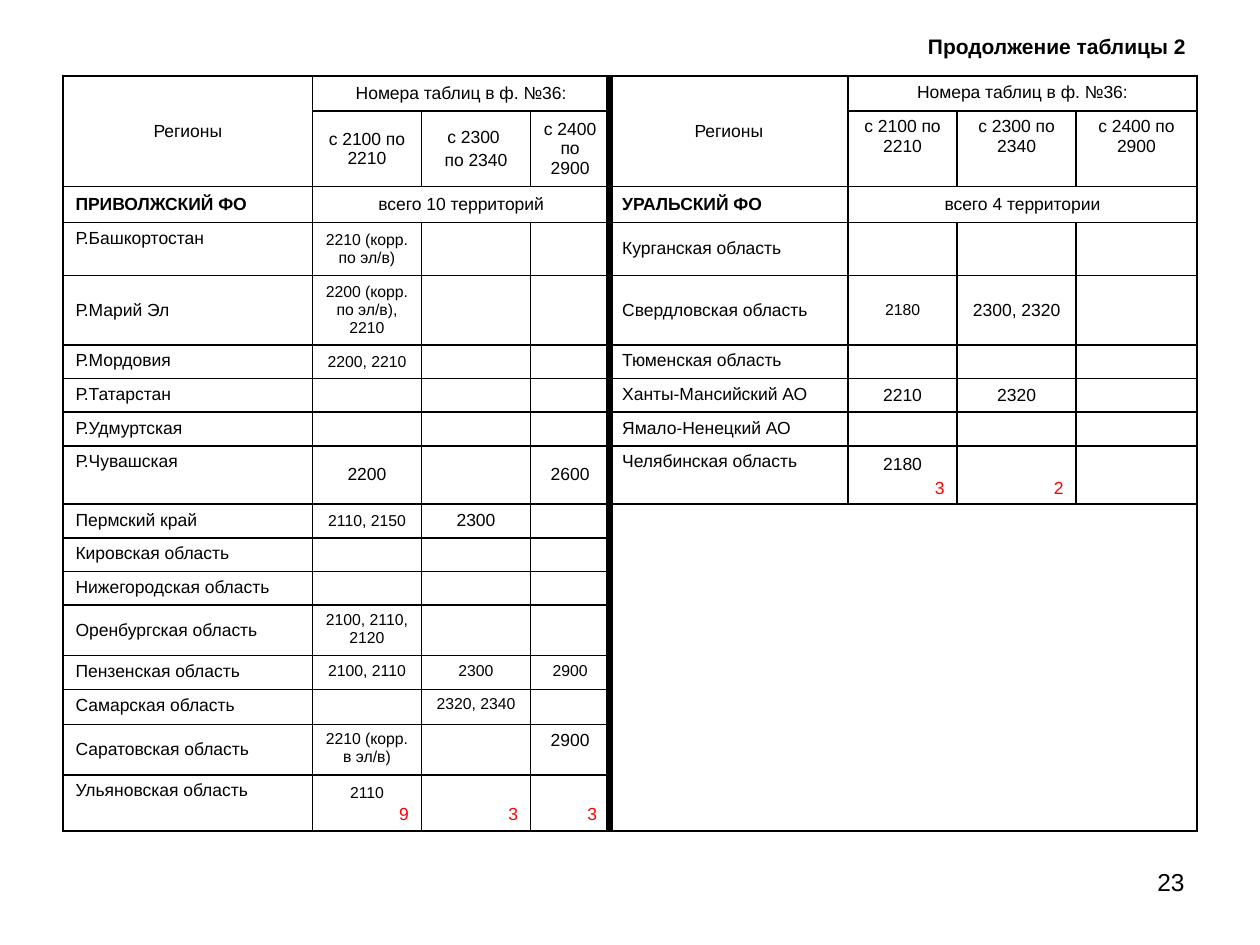
from dataclasses import dataclass

from lxml import etree
from pptx import Presentation
from pptx.dml.color import RGBColor
from pptx.enum.text import MSO_ANCHOR, PP_ALIGN
from pptx.oxml.ns import qn
from pptx.util import Pt

TOP, MIDDLE, BOTTOM = MSO_ANCHOR.TOP, MSO_ANCHOR.MIDDLE, MSO_ANCHOR.BOTTOM
LEFT, CENTER, RIGHT = PP_ALIGN.LEFT, PP_ALIGN.CENTER, PP_ALIGN.RIGHT
PLAIN_TABLE_STYLE = "{2D5ABB26-0587-4C30-8999-92F81FD0307C}"


@dataclass(frozen=True)
class Theme:
    font: str = "Arial"
    ink: str = "000000"
    total: str = "FF0000"
    title: int = 12
    body: int = 10
    small: int = 9
    page: int = 14
    grid: float = 1
    frame: float = 1.5
    divider: float = 4.5
    gap: int = 2


@dataclass(frozen=True)
class Entry:
    """Lines of one cell, with an optional red total under them."""
    text: str = ""
    size: int = Theme.body
    anchor: MSO_ANCHOR = MIDDLE
    bold: bool = False
    total: str = ""


def small(text, anchor=MIDDLE, total=""):
    return Entry(text, Theme.small, anchor, total=total)


def top(text):
    return Entry(text, anchor=TOP)


def summed(text, total):
    return Entry(text, anchor=BOTTOM, total=total)


TITLE = "Продолжение таблицы 2"
PAGE = "23"
FORM = "Номера таблиц в ф. №36:"
# Each half: regions, then the three groups of form tables.
HEADERS = [
    ("Регионы", FORM, "", "", "Регионы", top(FORM), "", ""),
    ("", "с 2100 по 2210", "с 2300 \nпо 2340", "с 2400 по 2900",
     "", top("с 2100 по 2210"), top("с 2300 по 2340"), top("с 2400 по 2900")),
]
DISTRICTS = (Entry("ПРИВОЛЖСКИЙ ФО", bold=True), "всего 10 территорий", "", "",
             Entry("УРАЛЬСКИЙ ФО", bold=True), "всего 4 территории", "", "")
VOLGA = [
    (top("Р.Башкортостан"), small("2210 (корр. по эл/в)"), "", ""),
    ("Р.Марий Эл", small("2200 (корр. по эл/в), 2210"), "", ""),
    (top("Р.Мордовия"), small("2200, 2210"), "", ""),
    (top("Р.Татарстан"), "", "", ""),
    (top("Р.Удмуртская"), "", "", ""),
    (top("Р.Чувашская"), "2200", "", "2600"),
    (top("Пермский край"), small("2110, 2150"), "2300", ""),
    (top("Кировская область"), "", "", ""),
    (top("Нижегородская область"), "", "", ""),
    ("Оренбургская область", small("2100, 2110, 2120", TOP), "", ""),
    (top("Пензенская область"), small("2100, 2110", TOP), small("2300", TOP),
     small("2900", TOP)),
    (top("Самарская область"), "", small("2320, 2340", TOP), ""),
    ("Саратовская область", small("2210 (корр. в эл/в)", TOP), "", top("2900")),
    (top("Ульяновская область"), small("2110", BOTTOM, "9"), summed("", "3"),
     summed("", "3")),
]
URAL = [
    ("Курганская область", "", "", ""),
    ("Свердловская область", small("2180"), "2300, 2320", ""),
    (top("Тюменская область"), "", "", ""),
    (top("Ханты-Мансийский АО"), "2210", "2320", ""),
    (top("Ямало-Ненецкий АО"), "", "", ""),
    (top("Челябинская область"), summed("2180", "3"), summed("", "2"), ""),
]
VACANT = [("",) * 4] * (len(VOLGA) - len(URAL))
ROWS = HEADERS + [DISTRICTS] + [v + u for v, u in zip(VOLGA, URAL + VACANT)]
HEAD_ROWS = len(HEADERS) + 1
FIRST_VACANT = HEAD_ROWS + len(URAL)
LAST = len(ROWS) - 1
HALF = 4

TABLE_LEFT, TABLE_TOP = 36, 43.4
WIDTHS = [142.6, 62.2, 62.4, 45.2, 136.2, 62.4, 68, 69]
LINE = 18.3
HEIGHTS = [20, 40.6, 20.4, 30.3, 37.7, LINE, LINE, LINE, 32, LINE, LINE, LINE,
           27.4, LINE, 20, 27.4, 30.3]
# First row, first column, last row, last column.
MERGES = [area for c in (0, HALF) for area in
          ((0, c, 1, c), (0, c + 1, 0, c + 3), (2, c + 1, 2, c + 3))]
MERGES += [(FIRST_VACANT, HALF, LAST, HALF + 2),
           (FIRST_VACANT, HALF + 3, LAST, HALF + 3)]


def write(frame, lines, anchor=MIDDLE):
    """Fill a text frame with (text, size, colour, bold, alignment) lines."""
    frame.vertical_anchor = anchor
    frame.word_wrap = True
    for i, (text, size, color, bold, align) in enumerate(lines):
        paragraph = frame.add_paragraph() if i else frame.paragraphs[0]
        if i:
            paragraph.space_before = Pt(Theme.gap)
        paragraph.text = text
        paragraph.alignment = align
        font = paragraph.font
        font.name, font.size, font.bold = Theme.font, Pt(size), bold
        font.color.rgb = RGBColor.from_string(color)


def add_label(slide, box, text, size, bold, anchor):
    label = slide.shapes.add_textbox(*map(Pt, box))
    write(label.text_frame, [(text, size, Theme.ink, bold, RIGHT)], anchor)


def entry_lines(entry, align):
    lines = [(text, entry.size, Theme.ink, entry.bold, align)
             for text in entry.text.split("\n") if text or not entry.total]
    if entry.total:
        lines.append((entry.total, Theme.body, Theme.total, False, RIGHT))
    return lines


def edge_width(position, end):
    return Theme.frame if position in (0, end) else Theme.grid


def column_edge(column):
    return Theme.divider if column == HALF else edge_width(column, len(WIDTHS))


def set_borders(cell, row, col):
    below, after = row + cell.span_height, col + cell.span_width
    widths = {"a:lnL": column_edge(col), "a:lnR": column_edge(after),
              "a:lnT": edge_width(row, len(ROWS)),
              "a:lnB": edge_width(below, len(ROWS))}
    if row == FIRST_VACANT and col >= HALF:
        widths["a:lnR" if col == HALF else "a:lnL"] = 0
    properties = cell._tc.get_or_add_tcPr()
    for index, (tag, width) in enumerate(widths.items()):
        line = etree.Element(qn(tag), w=str(Pt(width)))
        if width:
            fill = etree.SubElement(line, qn("a:solidFill"))
            etree.SubElement(fill, qn("a:srgbClr"), val=Theme.ink)
        else:
            etree.SubElement(line, qn("a:noFill"))
        properties.insert(index, line)


def add_regions_table(slide):
    frame = slide.shapes.add_table(
        len(ROWS), len(WIDTHS), Pt(TABLE_LEFT), Pt(TABLE_TOP),
        Pt(sum(WIDTHS)), Pt(sum(HEIGHTS)))
    table = frame.table
    table.first_row = table.horz_banding = False
    frame._element.find(".//" + qn("a:tableStyleId")).text = PLAIN_TABLE_STYLE
    for column, width in zip(table.columns, WIDTHS):
        column.width = Pt(width)
    for row, height in zip(table.rows, HEIGHTS):
        row.height = Pt(height)
    for r1, c1, r2, c2 in MERGES:
        table.cell(r1, c1).merge(table.cell(r2, c2))

    for r, entries in enumerate(ROWS):
        for c, entry in enumerate(entries):
            cell = table.cell(r, c)
            if isinstance(entry, str):
                entry = Entry(entry)
            is_name = c % HALF == 0 and r >= len(HEADERS)
            write(cell.text_frame,
                  entry_lines(entry, LEFT if is_name else CENTER))
            cell.vertical_anchor = entry.anchor
            cell.fill.background()
            if not cell.is_spanned:
                set_borders(cell, r, c)


def main():
    deck = Presentation()
    deck.slide_width, deck.slide_height = Pt(720), Pt(540)
    slide = deck.slides.add_slide(deck.slide_layouts[6])
    add_label(slide, (36.7, 15.1, 648, 22.3), TITLE, Theme.title, True, MIDDLE)
    add_regions_table(slide)
    add_label(slide, (516.2, 491.8, 167.8, 37.4), PAGE, Theme.page, False, TOP)
    deck.save("out.pptx")


if __name__ == "__main__":
    main()
